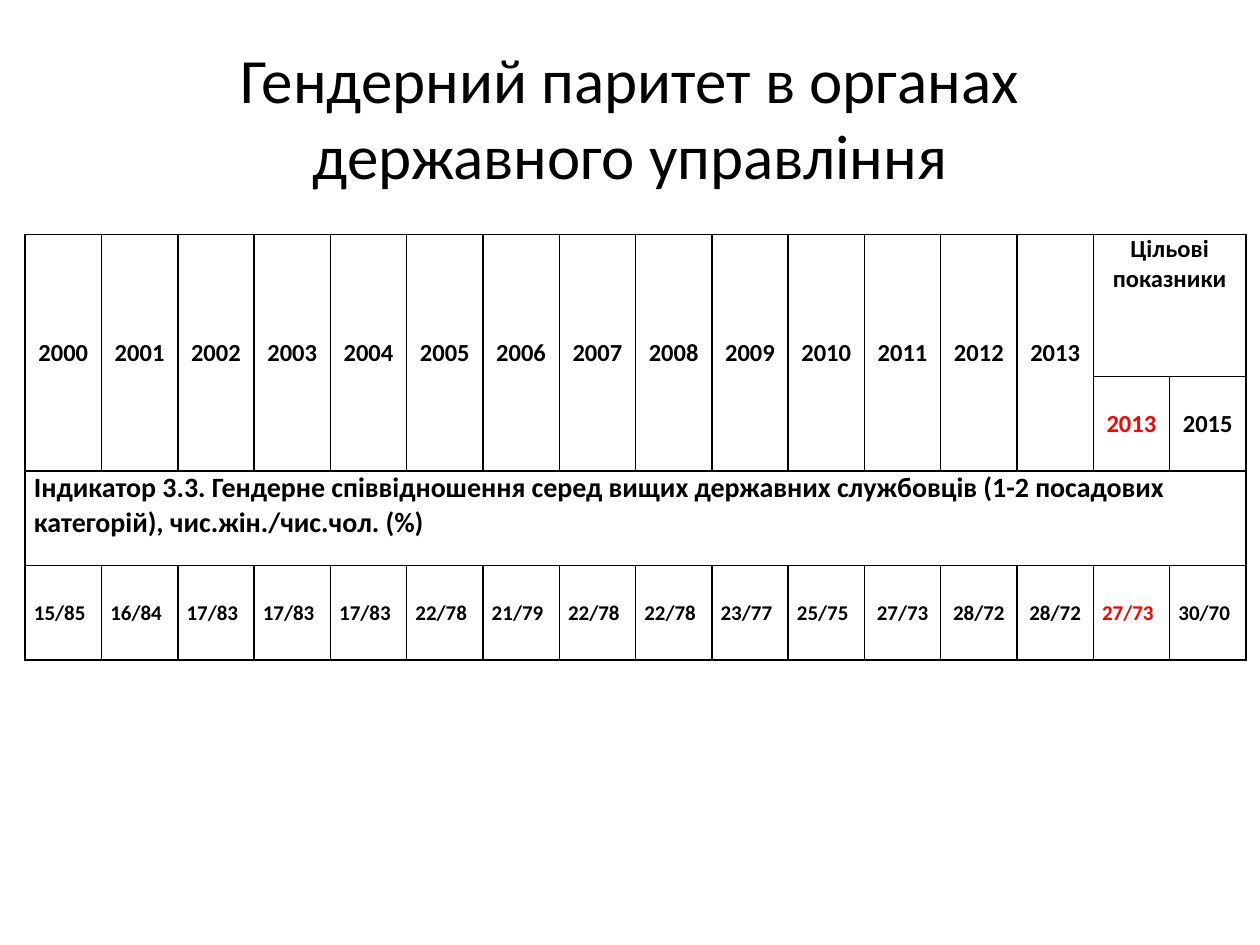
from lxml import etree
from pptx import Presentation
from pptx import util as u
from pptx.dml.color import RGBColor
from pptx.enum import text
from pptx.oxml import ns

BLACK, RED = "000000", "FF0000"
CENTER, LEFT = text.PP_ALIGN.CENTER, text.PP_ALIGN.LEFT
MIDDLE, TOP = text.MSO_ANCHOR.MIDDLE, text.MSO_ANCHOR.TOP


def write(frame, content, size, color=BLACK, align=CENTER, bold=True, spacing=6):
    frame.text = content
    paragraph = frame.paragraphs[0]
    paragraph_format = {"alignment": align, "space_before": u.Pt(spacing),
                        "space_after": u.Pt(spacing)}
    for name, value in paragraph_format.items():
        setattr(paragraph, name, value)
    font = paragraph.runs[0].font
    for name, value in {"name": "Calibri", "size": u.Pt(size), "bold": bold}.items():
        setattr(font, name, value)
    font.color.rgb = RGBColor.from_string(color)


def draw_borders(cell):
    properties = cell._tc.get_or_add_tcPr()
    for side in ("lnL", "lnR", "lnT", "lnB"):
        line = etree.SubElement(properties, ns.qn("a:" + side), w=str(u.Pt(1)))
        fill = etree.SubElement(line, ns.qn("a:solidFill"))
        etree.SubElement(fill, ns.qn("a:srgbClr"), val=BLACK)


presentation = Presentation()
presentation.slide_width, presentation.slide_height = u.Inches(10), u.Inches(7.5)
slide = presentation.slides.add_slide(presentation.slide_layouts[5])

title = slide.shapes.title
title_box = {"left": 0.5, "top": 0.3, "width": 9, "height": 1.25}
for name, value in title_box.items():
    setattr(title, name, u.Inches(value))
title.text_frame.vertical_anchor = MIDDLE
write(title.text_frame, "Гендерний паритет в органах державного управління", 36,
      bold=False, spacing=0)

years = [str(year) for year in range(2000, 2014)]
ratios = ("15/85 16/84 17/83 17/83 17/83 22/78 21/79 22/78 22/78 23/77 "
          "25/75 27/73 28/72 28/72 27/73 30/70").split()
columns = len(ratios)
target = len(years)  # first target column
row_heights = [1.13, 0.75, 0.75, 0.75]

frame = slide.shapes.add_table(len(row_heights), columns, u.Inches(0.2), u.Inches(1.86),
                               u.Inches(9.69), u.Inches(sum(row_heights)))
table = frame.table
table.first_row = table.horz_banding = False
for column in table.columns:
    column.width = u.Inches(9.69 / columns)
for row, height in zip(table.rows, row_heights):
    row.height = u.Inches(height)

cell_format = {"margin_left": u.Inches(0.07), "margin_right": u.Inches(0.07),
               "margin_top": 0, "margin_bottom": 0, "vertical_anchor": MIDDLE}
for cell in table.iter_cells():
    for name, value in cell_format.items():
        setattr(cell, name, value)
    draw_borders(cell)
    cell.fill.background()

for index, year in enumerate(years):
    table.cell(0, index).merge(table.cell(1, index))
    write(table.cell(0, index).text_frame, year, 14)

target_heading = table.cell(0, target)
target_heading.merge(table.cell(0, columns - 1))
target_heading.vertical_anchor = TOP
write(target_heading.text_frame, "Цільові показники", 14)
write(table.cell(1, target).text_frame, "2013", 14, RED)
write(table.cell(1, target + 1).text_frame, "2015", 14)

indicator = table.cell(2, 0)
indicator.merge(table.cell(2, columns - 1))
indicator.vertical_anchor = TOP
write(indicator.text_frame,
      "Індикатор 3.3. Гендерне співвідношення серед вищих державних службовців "
      "(1-2 посадових категорій), чис.жін./чис.чол. (%)", 16, align=LEFT)

for index, ratio in enumerate(ratios):
    write(table.cell(3, index).text_frame, ratio, 12,
          RED if index == target else BLACK,
          CENTER if 11 <= index < target else LEFT)

presentation.save("out.pptx")
